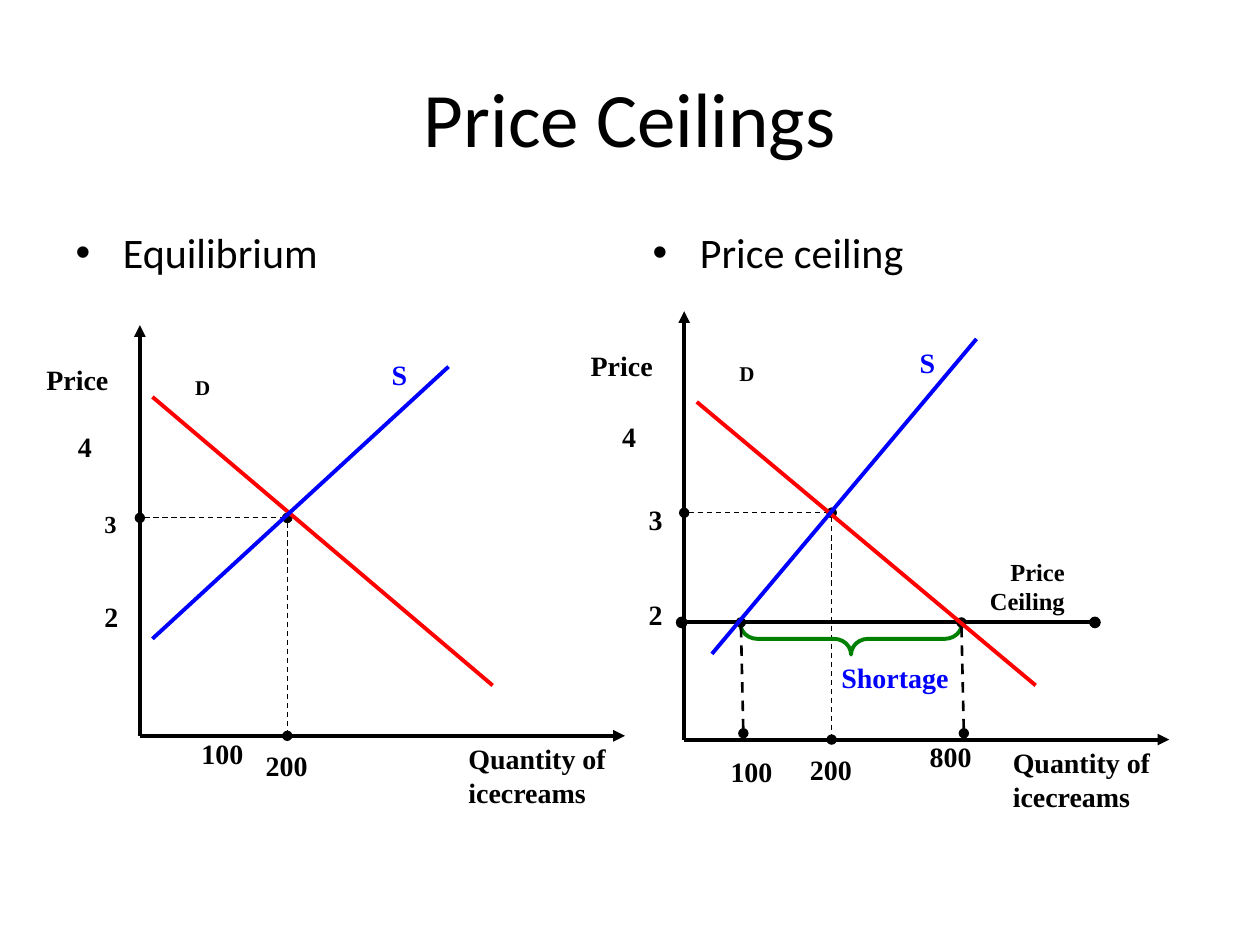
from dataclasses import dataclass

from lxml import etree
from pptx import Presentation
from pptx.dml.color import RGBColor
from pptx.enum import dml, shapes, text
from pptx.oxml import ns
from pptx.util import Inches, Pt

BLACK = RGBColor(0x00, 0x00, 0x00)
RED = RGBColor(0xFF, 0x00, 0x00)
BLUE = RGBColor(0x00, 0x00, 0xFF)
GREEN = RGBColor(0x00, 0x80, 0x00)
HEADING_FONT = "Calibri"
LABEL_FONT = "Times New Roman"


@dataclass
class Market:
    axis_x: float
    axis_top: float
    axis_bottom: float
    equilibrium: tuple
    demand: tuple
    supply: tuple
    labels: tuple


EQUILIBRIUM = Market(
    1.11, 2.58, 5.84, (2.28, 4.11),
    ((1.21, 3.15), (3.91, 5.44)),
    ((3.56, 2.91), (1.21, 5.07)),
    (
        ("4", 0.52, 3.36, 0.5, 16, BLACK),
        ("3", 0.73, 3.99, 0.5, 14, BLACK),
        ("2", 0.73, 4.71, 0.5, 16, BLACK),
        ("S", 3.01, 2.79, 0.38, 16, BLUE),
        ("100", 1.5, 5.8, 0.67, 16, BLACK),
    ),
)
CEILING = Market(
    5.43, 2.47, 5.87, (6.6, 4.07),
    ((5.53, 3.19), (8.22, 5.44)),
    ((7.75, 2.69), (5.65, 5.19)),
    (
        ("4", 4.84, 3.28, 0.5, 16, BLACK),
        ("3", 5.05, 3.94, 0.5, 16, BLACK),
        ("2", 5.05, 4.69, 0.5, 16, BLACK),
        ("S", 7.2, 2.69, 0.38, 16, BLUE),
        ("100", 5.7, 5.94, 0.67, 16, BLACK),
        ("800", 7.28, 5.82, 0.67, 16, BLACK),
        ("Shortage", 6.58, 5.19, 1.17, 16, BLUE),
    ),
)


def add_run(paragraph, words, size, font, color, bold=False):
    run = paragraph.add_run()
    run.text = words
    run.font.size = Pt(size)
    run.font.name = font
    run.font.bold = bold
    run.font.color.rgb = color


def fill_placeholder(holder, words, size, left, top, width, height):
    holder.left, holder.top = Inches(left), Inches(top)
    holder.width, holder.height = Inches(width), Inches(height)
    add_run(holder.text_frame.paragraphs[0], words, size, HEADING_FONT, BLACK)


def add_label(slide, words, left, top, width, size=16, color=BLACK,
              align=text.PP_ALIGN.LEFT, height=0.45):
    label = slide.shapes.add_textbox(
        Inches(left), Inches(top), Inches(width), Inches(height))
    label.text_frame.word_wrap = True
    paragraph = label.text_frame.paragraphs[0]
    paragraph.alignment = align
    add_run(paragraph, words, size, LABEL_FONT, color, bold=True)


def add_line(slide, start, end, color=BLACK, width=2.25, dashed=False,
             head=None, tail=None):
    line = slide.shapes.add_connector(
        shapes.MSO_CONNECTOR.STRAIGHT, *map(Inches, (*start, *end)))
    line.line.color.rgb = color
    line.line.width = Pt(width)
    if dashed:
        line.line.dash_style = dml.MSO_LINE.DASH
    properties = line._element.spPr
    outline = properties.find(ns.qn("a:ln"))
    for tag, kind in (("a:headEnd", head), ("a:tailEnd", tail)):
        if kind:
            etree.SubElement(outline, ns.qn(tag), type=kind)
    etree.SubElement(properties, ns.qn("a:effectLst"))


def add_dotted_guide(slide, start, end, width=0.75):
    add_line(slide, start, end, width=width, dashed=True,
             head="oval", tail="oval")


def add_shortage_brace(slide):
    brace = slide.shapes.add_shape(
        shapes.MSO_SHAPE.LEFT_BRACE,
        Inches(6.63), Inches(4.19), Inches(0.25), Inches(1.76))
    brace.rotation = 270
    brace.adjustments[0] = 0.54
    brace.shadow.inherit = False
    brace.fill.background()
    brace.line.color.rgb = GREEN
    brace.line.width = Pt(2.25)


def draw_market(slide, market):
    x, top, bottom = market.axis_x, market.axis_top, market.axis_bottom
    quantity, price = market.equilibrium
    add_line(slide, (x, top), (x, bottom), head="triangle")
    add_line(slide, (x, bottom), (x + 3.85, bottom), tail="triangle")
    add_dotted_guide(slide, (quantity, price), (quantity, bottom))
    add_dotted_guide(slide, (x, price), (quantity, price))
    add_label(slide, "D", x + 0.34, top + 0.34, 0.5, 12)
    add_label(slide, "Price", x - 0.84, top + 0.25, 0.84)
    add_label(slide, "Quantity of icecreams", x + 2.51, bottom, 1.5,
              height=0.6)
    add_label(slide, "200", quantity - 0.27, bottom + 0.05, 0.67)
    for label in market.labels:
        add_label(slide, *label)


def draw_curves(slide, market):
    add_line(slide, *market.demand, color=RED)
    add_line(slide, *market.supply, color=BLUE)


def draw_price_ceiling(slide):
    ceiling_price = 4.94
    add_shortage_brace(slide)
    add_line(slide, (5.41, ceiling_price), (8.69, ceiling_price),
             head="oval", tail="oval")
    for quantity in (5.88, 7.63):
        add_dotted_guide(slide, (quantity, ceiling_price),
                         (quantity + 0.02, 5.82), width=1.5)
    add_label(slide, "Price Ceiling", 7.65, 4.37, 0.9, 14,
              align=text.PP_ALIGN.RIGHT, height=0.6)


def main():
    deck = Presentation()
    deck.slide_width, deck.slide_height = Inches(10), Inches(7.5)
    slide = deck.slides.add_slide(deck.slide_layouts[3])
    title, left_body, right_body = list(slide.placeholders)[:3]
    fill_placeholder(title, "Price Ceilings", 44, 0.5, 0.3, 9, 1.25)
    fill_placeholder(left_body, "Equilibrium", 24, 0.5, 1.75, 4.42, 4.95)
    fill_placeholder(right_body, "Price ceiling", 24, 5.08, 1.75, 4.42, 4.95)
    draw_market(slide, EQUILIBRIUM)
    draw_curves(slide, EQUILIBRIUM)
    draw_market(slide, CEILING)
    draw_price_ceiling(slide)
    draw_curves(slide, CEILING)
    deck.save("out.pptx")


if __name__ == "__main__":
    main()
